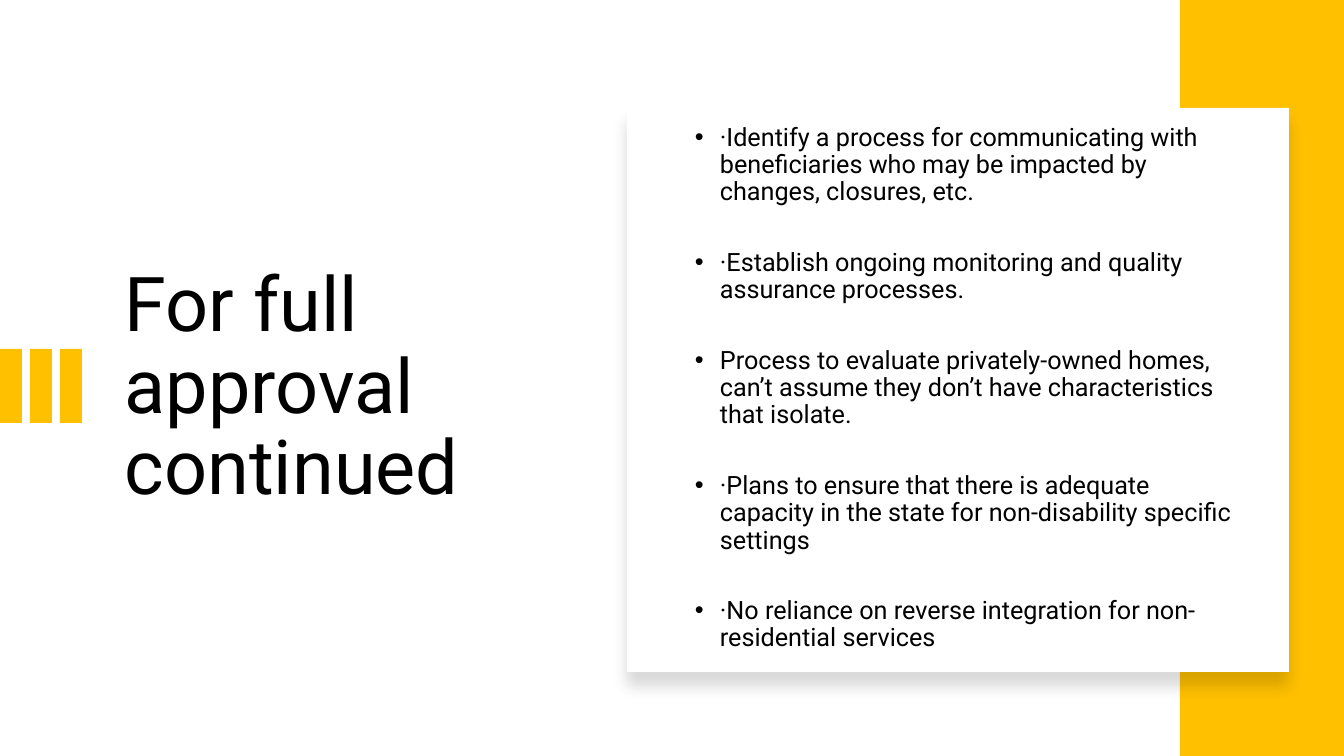
from lxml import etree
from pptx import Presentation
from pptx import util as u
from pptx.dml.color import RGBColor
from pptx.enum import shapes, text
from pptx.oxml.ns import qn

WIDTH, HEIGHT = 1344, 756
FONT = "Roboto"
AMBER = RGBColor(0xFF, 0xC0, 0x00)
WHITE = RGBColor(0xFF, 0xFF, 0xFF)
BLACK = RGBColor(0x00, 0x00, 0x00)

TITLE = "For full approval continued"
REQUIREMENTS = [
    "·Identify a process for communicating with beneficiaries who may be impacted by changes, closures, etc.",
    "·Establish ongoing monitoring and quality assurance processes.",
    "Process to evaluate privately-owned homes, can’t assume they don’t have characteristics that isolate.",
    "·Plans to ensure that there is adequate capacity in the state for non-disability specific settings",
    "·No reliance on reverse integration for non-residential services",
]


def px(length):
    return u.Emu(round(length * 12192000 / WIDTH))


def add_block(slide, box, color):
    block = slide.shapes.add_shape(shapes.MSO_SHAPE.RECTANGLE, *map(px, box))
    block.shadow.inherit = False
    block.fill.solid()
    block.fill.fore_color.rgb = color
    block.line.fill.background()
    return block


def add_frame(slide, box):
    frame = slide.shapes.add_textbox(*map(px, box)).text_frame
    frame.word_wrap = True
    frame.vertical_anchor = text.MSO_ANCHOR.MIDDLE
    return frame


def style(paragraph, size):
    paragraph.line_spacing = 0.9
    paragraph.font.name = FONT
    paragraph.font.size = u.Pt(size)
    paragraph.font.color.rgb = BLACK


def add_bullet(paragraph):
    props = paragraph._p.get_or_add_pPr()
    props.set("marL", str(px(38)))
    props.set("indent", str(-px(25)))
    etree.SubElement(props, qn("a:buFont"), typeface="Arial")
    etree.SubElement(props, qn("a:buChar"), char="•")


def add_drop_shadow(block):
    effects = block._element.spPr.find(qn("a:effectLst"))
    shadow = etree.SubElement(effects, qn("a:outerShdw"), blurRad=str(u.Pt(11)),
                              dist=str(u.Pt(10)), dir="5400000", rotWithShape="0")
    color = etree.SubElement(shadow, qn("a:srgbClr"), val=str(BLACK))
    etree.SubElement(color, qn("a:alpha"), val="15000")


def title_region(slide, left, top, width, height):
    # Three accent bars at the slide edge
    for bar in range(3):
        add_block(slide, (left + bar * 30, top + 202, 22, 74), AMBER)
    # Title
    heading = add_frame(slide, (left + 115, top, width - 115, height)).paragraphs[0]
    heading.text = TITLE
    style(heading, 54)


def requirements_card(slide, left, top, width, height):
    add_drop_shadow(add_block(slide, (left, top, width, height), WHITE))
    # Bulleted requirements
    frame = add_frame(slide, (left + 45, top + 39, width - 82, height - 81))
    for index, requirement in enumerate(REQUIREMENTS):
        item = frame.paragraphs[0] if index == 0 else frame.add_paragraph()
        item.text = requirement
        add_bullet(item)
        style(item, 18)
        if index:
            item.space_before = u.Pt(31)


def main():
    deck = Presentation()
    deck.slide_width, deck.slide_height = px(WIDTH), px(HEIGHT)
    slide = deck.slides.add_slide(deck.slide_layouts[6])
    title_region(slide, 0, 147, 544, 483)
    # Amber band behind the card
    add_block(slide, (1180, 0, WIDTH - 1180, HEIGHT), AMBER)
    requirements_card(slide, 627, 108, 662, 564)
    deck.save("out.pptx")


if __name__ == "__main__":
    main()
